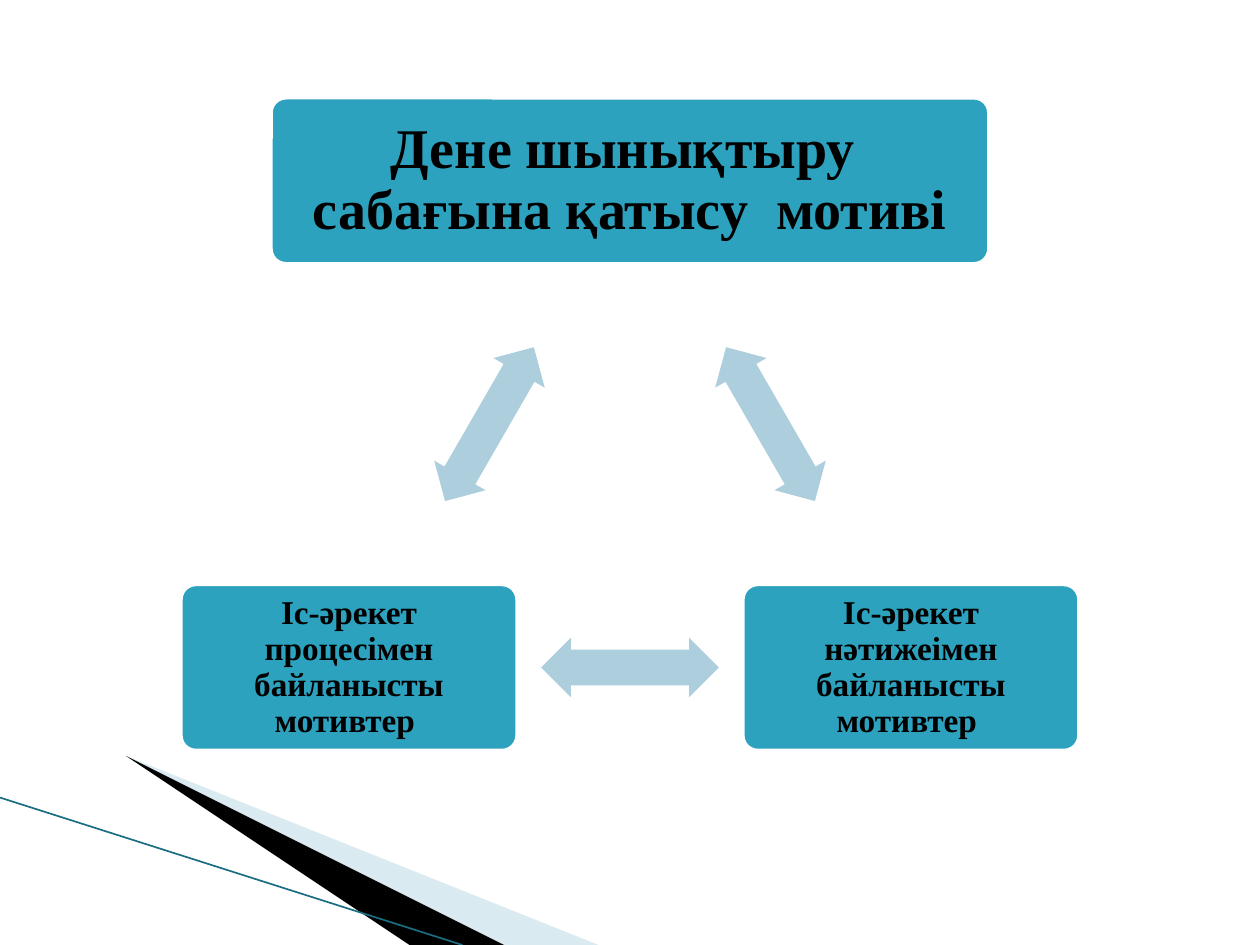
"""Build a slide with a triangle of three linked motives."""
from dataclasses import dataclass
from math import cos, radians, sin

from lxml.etree import SubElement
from pptx import Presentation
from pptx.dml.color import RGBColor
from pptx.enum.shapes import MSO_CONNECTOR, MSO_SHAPE
from pptx.enum.text import MSO_ANCHOR, MSO_AUTO_SIZE, PP_ALIGN
from pptx.oxml.ns import qn
from pptx.util import Inches, Pt

WIDTH, HEIGHT = 10, 7.5
CENTER = (5, 4.01)
RADIUS = 2.575
NODE_HEIGHT = 0.18 * HEIGHT
ARROW_SIZE = (1.41, 0.47)
TEAL, PALE_TEAL, WHITE, BLACK = "2DA2BF", "ADCEDC", "FFFFFF", "000000"


@dataclass(frozen=True)
class Motive:
    """A node of the triangle, its width given as a share of the slide."""
    text: str
    angle: float
    width: float
    size: int
    inset: float
    is_title: bool = False


@dataclass(frozen=True)
class Wedge:
    """A filled corner decoration with its outline in inches."""
    points: tuple
    color: str
    opacity: int = 100


MOTIVES = (
    Motive("Дене шынықтыру  сабағына қатысу  мотиві", -90, 0.573, 32, 0.13, True),
    Motive("Іс-әрекет нәтижеімен байланысты мотивтер ", 30, 0.27, 19, 0.08),
    Motive("Іс-әрекет процесімен байланысты мотивтер ", 150, 0.27, 19, 0.08),
)
WEDGES = (
    Wedge(((0.55, 6.5), (5.92, HEIGHT), (4.55, HEIGHT)), "A0CBDC", 40),
    Wedge(((0.53, 6.49), (4.54, HEIGHT), (3.68, HEIGHT)), BLACK),
)


def rgb(color: str) -> RGBColor:
    """Turn a hex string into a colour."""
    return RGBColor.from_string(color)


def on_circle(angle: float, radius: float) -> tuple[float, float]:
    """Return the point at an angle around the triangle's centre."""
    turn = radians(angle)
    return CENTER[0] + radius * cos(turn), CENTER[1] + radius * sin(turn)


def centered(middle: tuple, width: float, height: float) -> list:
    """Return left, top, width and height around a middle point."""
    left, top = middle[0] - width / 2, middle[1] - height / 2
    return [Inches(value) for value in (left, top, width, height)]


def paint(shape, color: str) -> None:
    """Give a shape a plain fill without line or shadow."""
    shape.shadow.inherit = False
    shape.fill.solid()
    shape.fill.fore_color.rgb = rgb(color)
    shape.line.fill.background()


def apply(target, values: dict) -> None:
    """Set each named format value on a target."""
    for key, value in values.items():
        setattr(target, key, value)


def write(shape, motive: Motive) -> None:
    """Write a motive's text in bold black type."""
    frame = shape.text_frame
    inset = Inches(motive.inset)
    apply(frame, {
        "text": motive.text, "word_wrap": True, "auto_size": MSO_AUTO_SIZE.NONE,
        "vertical_anchor": MSO_ANCHOR.MIDDLE, "margin_left": inset,
        "margin_right": inset, "margin_top": inset, "margin_bottom": inset,
    })
    paragraph = frame.paragraphs[0]
    apply(paragraph, {"alignment": PP_ALIGN.CENTER, "line_spacing": 0.9,
                      "space_before": Pt(0)})
    font = paragraph.runs[0].font
    apply(font, {"name": "Times New Roman", "size": Pt(motive.size), "bold": True})
    font.color.rgb = rgb(BLACK)


def draw_wedge(slide, wedge: Wedge) -> None:
    """Draw one corner wedge."""
    builder = slide.shapes.build_freeform(*wedge.points[0], scale=Inches(1))
    builder.add_line_segments(wedge.points[1:], close=True)
    shape = builder.convert_to_shape()
    paint(shape, wedge.color)
    if wedge.opacity < 100:
        tint = shape.element.spPr.find(qn("a:solidFill"))[0]
        SubElement(tint, qn("a:alpha"), val=str(wedge.opacity * 1000))


def draw_edge(slide) -> None:
    """Draw the thin line along the corner wedges."""
    edge = slide.shapes.add_connector(
        MSO_CONNECTOR.STRAIGHT, 0, Inches(6.33), Inches(3.67), Inches(HEIGHT))
    edge.line.color.rgb = rgb("1A6E82")
    edge.line.width = Pt(0.95)
    SubElement(edge.element.spPr, qn("a:effectLst"))


def draw_node(slide, motive: Motive) -> None:
    """Draw a motive's rounded box, with the title placeholder on the top one."""
    middle = on_circle(motive.angle, RADIUS)
    width = motive.width * WIDTH
    box = slide.shapes.add_shape(
        MSO_SHAPE.ROUNDED_RECTANGLE, *centered(middle, width, NODE_HEIGHT))
    box.adjustments[0] = 0.1
    paint(box, TEAL)
    box.line.color.rgb = rgb(WHITE)
    box.line.width = Pt(4.33)
    if not motive.is_title:
        write(box, motive)
        return
    title = slide.shapes.title
    title.left, title.top, title.width, title.height = centered(
        middle, width - 0.08, NODE_HEIGHT - 0.08)
    box.element.addnext(title.element)
    write(title, motive)


def draw_arrow(slide, angle: float) -> None:
    """Draw the double arrow in the middle of a triangle side."""
    arrow = slide.shapes.add_shape(
        MSO_SHAPE.LEFT_RIGHT_ARROW, *centered(on_circle(angle, RADIUS / 2), *ARROW_SIZE))
    arrow.adjustments[0], arrow.adjustments[1] = 0.6, 0.5
    arrow.rotation = (angle + 90) % 360
    paint(arrow, PALE_TEAL)


def main() -> None:
    """Build and save the slide."""
    deck = Presentation()
    deck.slide_width, deck.slide_height = Inches(WIDTH), Inches(HEIGHT)
    slide = deck.slides.add_slide(deck.slide_layouts[5])
    for wedge in WEDGES:
        draw_wedge(slide, wedge)
    draw_edge(slide)
    for motive in MOTIVES:
        draw_node(slide, motive)
        draw_arrow(slide, motive.angle + 60)
    deck.save("out.pptx")


if __name__ == "__main__":
    main()
